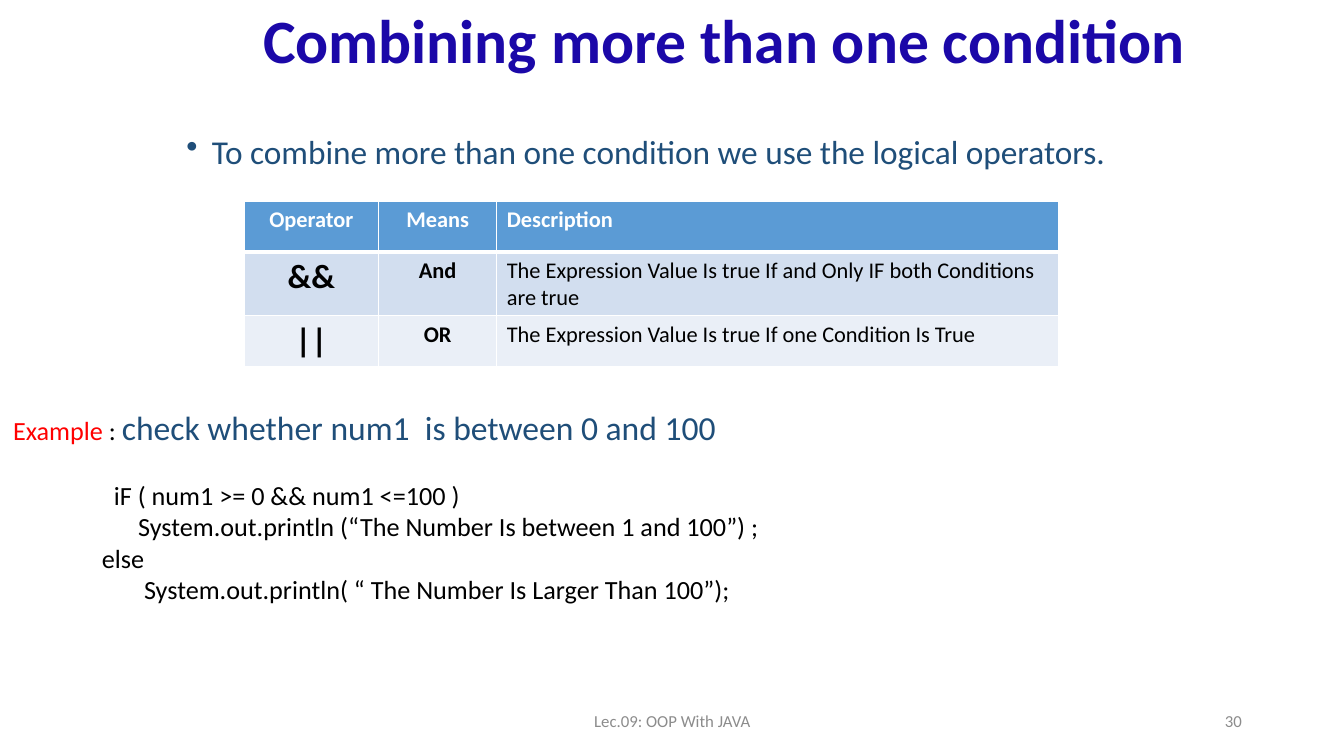
import pptx
import pptx.dml.color
import pptx.enum.text
import pptx.oxml
import pptx.oxml.ns
import pptx.util
from pptx.util import Cm

COLORS = {
    "title": "1B08A8", "lead": "1F4E79", "example": "FF0000", "ink": "000000",
    "footer": "8C8C8C", "white": "FFFFFF", "header": "5B9BD5",
    "odd": "D2DEEF", "even": "EAEFF7",
}
ALIGN = pptx.enum.text.PP_ALIGN
ANCHOR = pptx.enum.text.MSO_ANCHOR


class LectureSlide:
    """Draws styled text, bullets and tables on one lecture slide."""

    def __init__(self, deck, font="Calibri"):
        self.slide = deck.slides.add_slide(deck.slide_layouts[6])
        self.font = font

    def color(self, name):
        return pptx.dml.color.RGBColor.from_string(COLORS[name])

    def run(self, paragraph, text, size, color, bold=False):
        run = paragraph.add_run()
        run.text = text
        run.font.name = self.font
        run.font.size = pptx.util.Pt(size)
        run.font.bold = bold
        run.font.color.rgb = self.color(color)

    def frame(self, left, top, width, height, anchor=ANCHOR.TOP):
        box = self.slide.shapes.add_textbox(Cm(left), Cm(top), Cm(width), Cm(height))
        box.text_frame.word_wrap = True
        box.text_frame.vertical_anchor = anchor
        return box.text_frame

    def line(self, place, text, size, color, align, bold=False, spacing=1.0):
        paragraph = self.frame(*place, anchor=ANCHOR.MIDDLE).paragraphs[0]
        paragraph.alignment = align
        paragraph.line_spacing = spacing
        self.run(paragraph, text, size, color, bold)

    def bullet(self, place, text, size, color):
        paragraph = self.frame(*place).paragraphs[0]
        paragraph.line_spacing = 0.8
        properties = paragraph._p.get_or_add_pPr()
        properties.set("marL", str(Cm(0.64)))
        properties.set("indent", str(-Cm(0.64)))
        properties.append(pptx.oxml.parse_xml(
            f'<a:buChar {pptx.oxml.ns.nsdecls("a")} char="•"/>'))
        self.run(paragraph, text, size, color)

    def example(self, place, heading, code, size):
        frame = self.frame(*place)
        for part in heading:
            self.run(frame.paragraphs[0], *part)
        for number, (indent, text) in enumerate(code):
            paragraph = frame.add_paragraph()
            paragraph._p.get_or_add_pPr().set("marL", str(Cm(indent)))
            if number == 0:
                paragraph.space_before = pptx.util.Pt(22.8)
            self.run(paragraph, text, size, "ink")

    def borders(self, cell, bottom, top):
        properties = cell._tc.get_or_add_tcPr()
        widths = {"lnL": 1, "lnR": 1, "lnT": top, "lnB": bottom}
        for place, (side, width) in enumerate(widths.items()):
            properties.insert(place, pptx.oxml.parse_xml(
                f'<a:{side} {pptx.oxml.ns.nsdecls("a")} w="{pptx.util.Pt(width)}">'
                f'<a:solidFill><a:srgbClr val="{COLORS["white"]}"/></a:solidFill></a:{side}>'))

    def table(self, left, top, widths, heights, rows):
        table = self.slide.shapes.add_table(
            len(rows), len(widths), Cm(left), Cm(top),
            Cm(sum(widths)), Cm(sum(heights))).table
        for column, width in zip(table.columns, widths):
            column.width = Cm(width)
        for r, (texts, height) in enumerate(zip(rows, heights)):
            table.rows[r].height = Cm(height)
            for c, text in enumerate(texts):
                cell = table.cell(r, c)
                cell.fill.solid()
                cell.fill.fore_color.rgb = self.color(("header", "odd", "even")[r])
                self.borders(cell, bottom=3 if r == 0 else 1, top=3 if r == 1 else 1)
                paragraph = cell.text_frame.paragraphs[0]
                paragraph.alignment = ALIGN.LEFT if c == 2 else ALIGN.CENTER
                self.run(paragraph, text, 24 if r and c == 0 else 16,
                         "ink" if r else "white", bold=r == 0 or c < 2)


def main():
    deck = pptx.Presentation()
    deck.slide_width, deck.slide_height = Cm(33.87), Cm(19.05)
    lecture = LectureSlide(deck)
    lecture.line((3.66, -0.74, 29.21, 3.68), "Combining more than one condition",
                 44, "title", ALIGN.CENTER, bold=True, spacing=0.9)
    lecture.table(6.15, 5.08, [3.39, 2.98, 14.17], [1.27, 1.6, 1.27], [
        ("Operator", "Means", "Description"),
        ("&&", "And", "The Expression Value Is true If and Only IF both Conditions are true"),
        ("||", "OR", "The Expression Value Is true If one Condition Is True"),
    ])
    lecture.bullet((4.45, 3.38, 25.07, 1.7),
                   "To combine more than one condition we use the logical operators.",
                   23.8, "lead")
    heading = [
        ("Example", 18.7, "example"),
        (" : ", 18.7, "ink"),
        ("check whether num1  is between 0 and 100", 24, "lead"),
    ]
    code = [
        (2.54, "iF ( num1 >= 0 && num1 <=100 )"),
        (3.15, "System.out.println (“The Number Is between 1 and 100”) ;"),
        (2.24, "else"),
        (3.3, "System.out.println( “ The Number Is Larger Than 100”);"),
    ]
    lecture.example((0.08, 10.13, 27.1, 6.07), heading, code, 18.7)
    lecture.line((11.23, 17.65, 11.43, 1.02), "Lec.09: OOP With JAVA",
                 12, "footer", ALIGN.CENTER)
    lecture.line((23.93, 17.65, 7.62, 1.02), "30", 12, "footer", ALIGN.RIGHT)
    deck.save("out.pptx")


if __name__ == "__main__":
    main()
